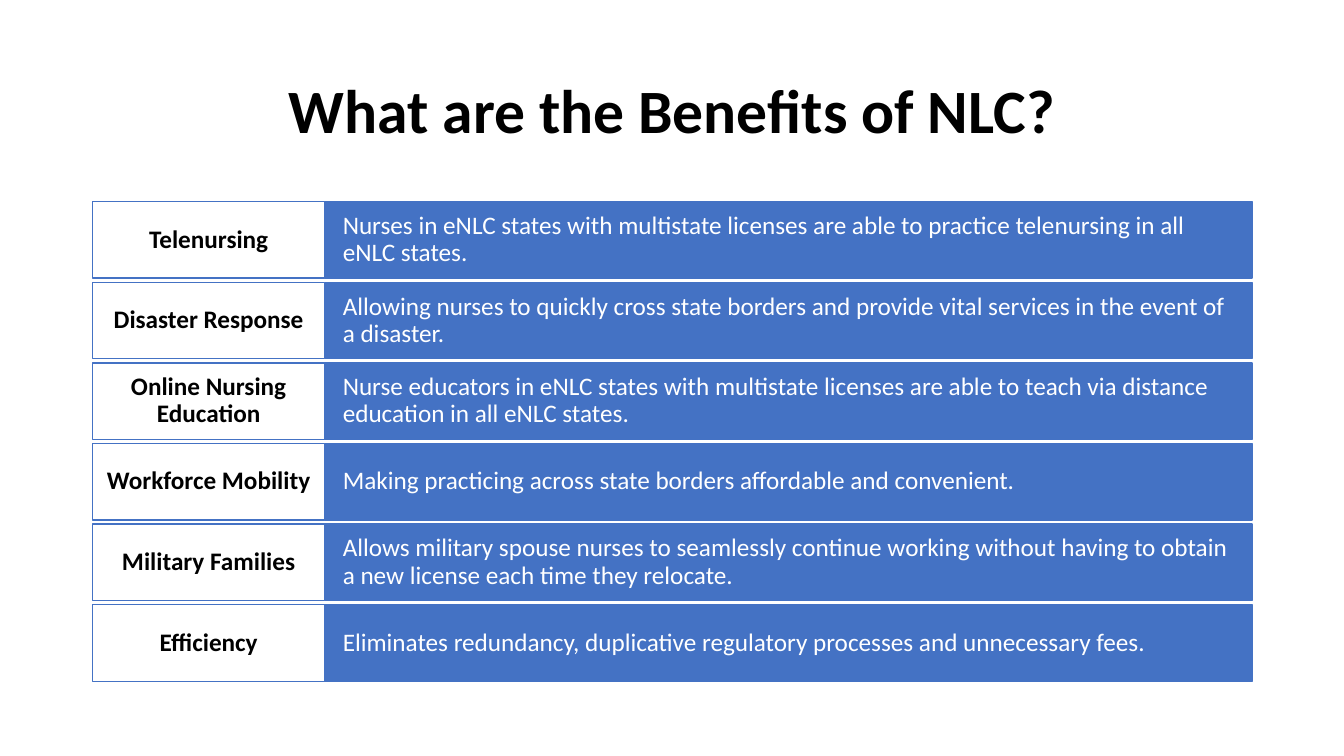
from dataclasses import dataclass

from pptx import Presentation
from pptx.dml.color import RGBColor
from pptx.enum.shapes import MSO_SHAPE
from pptx.enum.text import MSO_ANCHOR, MSO_AUTO_SIZE, PP_ALIGN
from pptx.slide import Slide
from pptx.text.text import TextFrame
from pptx.util import Inches, Pt


@dataclass(frozen=True)
class Theme:
    font: str = "Calibri"
    blue: RGBColor = RGBColor(0x44, 0x72, 0xC4)
    white: RGBColor = RGBColor(0xFF, 0xFF, 0xFF)
    black: RGBColor = RGBColor(0, 0, 0)
    title_size: int = 44
    body_size: int = 18


@dataclass(frozen=True)
class Benefit:
    name: str
    description: str


@dataclass(frozen=True)
class CellStyle:
    left: float
    width: float
    side_inset: float
    fill: RGBColor
    color: RGBColor
    align: PP_ALIGN
    bold: bool


THEME = Theme()
LABEL = CellStyle(0.92, 2.3, 0.12, THEME.white, THEME.black, PP_ALIGN.CENTER, True)
DESCRIPTION = CellStyle(3.22, 9.2, 0.18, THEME.blue, THEME.white, PP_ALIGN.LEFT, False)

FIRST_ROW_TOP = 2.0
ROW_PITCH = 0.8
ROW_HEIGHT = 0.76

BENEFITS = [
    Benefit("Telenursing",
            "Nurses in eNLC states with multistate licenses are able to practice "
            "telenursing in all eNLC states."),
    Benefit("Disaster Response",
            "Allowing nurses to quickly cross state borders and provide vital services "
            "in the event of a disaster."),
    Benefit("Online Nursing Education",
            "Nurse educators in eNLC states with multistate licenses are able to teach "
            "via distance education in all eNLC states."),
    Benefit("Workforce Mobility",
            "Making practicing across state borders affordable and convenient."),
    Benefit("Military Families",
            "Allows military spouse nurses to seamlessly continue working without having "
            "to obtain a new license each time they relocate."),
    Benefit("Efficiency",
            "Eliminates redundancy, duplicative regulatory processes and unnecessary fees."),
]


def write_text(frame: TextFrame, text: str, *, size: int, color: RGBColor,
               align: PP_ALIGN, bold: bool = False) -> None:
    frame.word_wrap = True
    frame.auto_size = MSO_AUTO_SIZE.NONE
    frame.vertical_anchor = MSO_ANCHOR.MIDDLE
    paragraph = frame.paragraphs[0]
    paragraph.alignment = align
    paragraph.line_spacing = 0.9
    run = paragraph.add_run()
    run.text = text
    run.font.name = THEME.font
    run.font.size = Pt(size)
    run.font.bold = bold
    run.font.color.rgb = color


def add_title(slide: Slide, text: str) -> None:
    title = slide.shapes.title
    title.left, title.top = Inches(0.92), Inches(0.4)
    title.width, title.height = Inches(11.5), Inches(1.45)
    write_text(title.text_frame, text, size=THEME.title_size, color=THEME.black,
               align=PP_ALIGN.CENTER, bold=True)


def add_cell(slide: Slide, text: str, top: float, style: CellStyle) -> None:
    shape = slide.shapes.add_shape(
        MSO_SHAPE.RECTANGLE, Inches(style.left), Inches(top),
        Inches(style.width), Inches(ROW_HEIGHT))
    shape.shadow.inherit = False
    shape.fill.solid()
    shape.fill.fore_color.rgb = style.fill
    shape.line.color.rgb = THEME.blue
    shape.line.width = Pt(1)
    frame = shape.text_frame
    frame.margin_left = frame.margin_right = Inches(style.side_inset)
    frame.margin_top = frame.margin_bottom = Inches(0.07)
    write_text(frame, text, size=THEME.body_size, color=style.color,
               align=style.align, bold=style.bold)


def main() -> None:
    presentation = Presentation()
    presentation.slide_width = Inches(13.33)
    presentation.slide_height = Inches(7.5)
    title_only = presentation.slide_layouts.get_by_name("Title Only")
    slide = presentation.slides.add_slide(title_only)

    add_title(slide, "What are the Benefits of NLC?")
    for index, benefit in enumerate(BENEFITS):
        top = FIRST_ROW_TOP + index * ROW_PITCH
        add_cell(slide, benefit.description, top, DESCRIPTION)
        add_cell(slide, benefit.name, top, LABEL)

    presentation.save("out.pptx")


if __name__ == "__main__":
    main()
